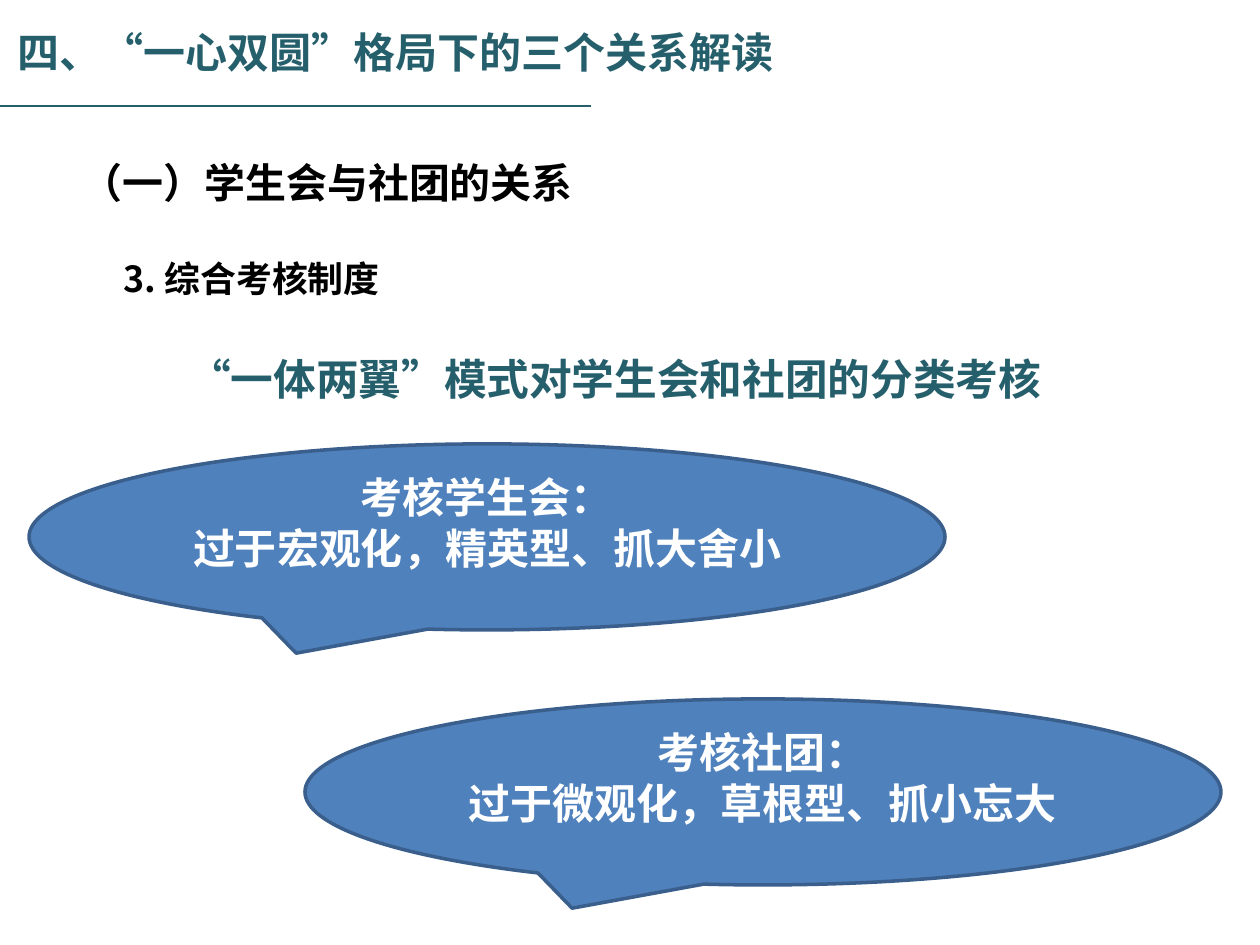
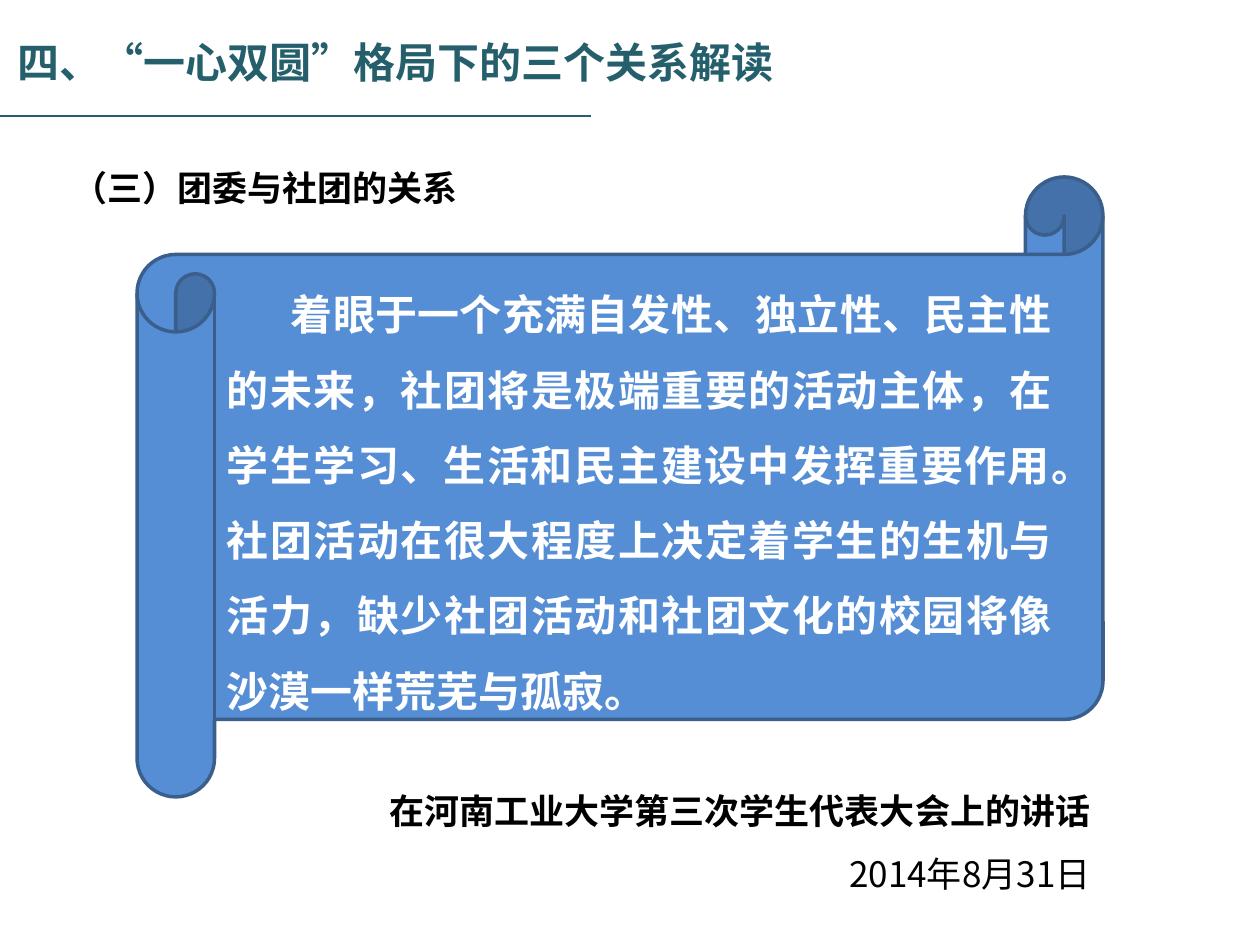
from dataclasses import dataclass

from lxml import etree
from pptx import Presentation
from pptx import util as u
from pptx.dml.color import RGBColor
from pptx.enum import shapes, text
from pptx.oxml.ns import qn


@dataclass(frozen=True)
class Theme:
    font: str = "Noto Sans CJK SC"
    teal: RGBColor = RGBColor.from_string("265F6C")
    black: RGBColor = RGBColor.from_string("000000")
    white: RGBColor = RGBColor.from_string("FFFFFF")
    callout_blue: RGBColor = RGBColor.from_string("4F81BD")
    scroll_blue: RGBColor = RGBColor.from_string("558ED5")
    outline: RGBColor = RGBColor.from_string("3A5F8C")
    heading: float = 24
    section: float = 23.4
    topic: float = 20.5
    claim: float = 24.4
    small: float = 20


theme = Theme()
left, center, right, justify = (
    text.PP_ALIGN.LEFT, text.PP_ALIGN.CENTER, text.PP_ALIGN.RIGHT, text.PP_ALIGN.JUSTIFY)


def px(*lengths):
    return [u.Emu(round(length * 914400 / 126)) for length in lengths]


def write(frame, lines, size, color, leading, align=left, bold=True, before=0, indent=0):
    frame.word_wrap = True
    frame.auto_size = text.MSO_AUTO_SIZE.NONE
    for line in lines:
        paragraph = frame.add_paragraph() if frame.text else frame.paragraphs[0]
        paragraph.text = line
        paragraph.alignment = align
        paragraph.line_spacing = u.Pt(leading)
        paragraph.space_before = u.Pt(before)
        properties = paragraph._p.get_or_add_pPr()
        properties.set("marL", "0")
        properties.set("indent", str(px(indent)[0]))
        paragraph.font.name = theme.font
        paragraph.font.size = u.Pt(size)
        paragraph.font.bold = bold
        paragraph.font.color.rgb = color
        defaults = properties.find(qn("a:defRPr"))
        etree.SubElement(defaults, qn("a:ea")).set("typeface", theme.font)


prs = Presentation()
prs.slide_width, prs.slide_height = px(1260, 945)
title_only = prs.slide_layouts[5]

for drop in (0, 10):
    slide = prs.slides.add_slide(title_only)
    heading = slide.shapes.title
    heading.left, heading.top, heading.width, heading.height = px(5, 20 + drop, 935, 75)
    heading.text_frame.vertical_anchor = text.MSO_ANCHOR.TOP
    write(heading.text_frame, ["四、“一心双圆”格局下的三个关系解读"],
          theme.heading, theme.teal, 29)

    rule = slide.shapes.add_connector(
        shapes.MSO_CONNECTOR.STRAIGHT, *px(0, 106 + drop, 591, 106 + drop))
    rule.line.color.rgb = theme.teal
    rule.line.width = u.Pt(1.25)
    etree.SubElement(rule._element.spPr, qn("a:effectLst"))

assessment, outlook = prs.slides

outline = assessment.shapes.add_textbox(*px(69, 127, 1091, 290)).text_frame
write(outline, ["（一）学生会与社团的关系"], theme.section, theme.black, 42)
write(outline, ["3. 综合考核制度"], theme.topic, theme.black, 42, justify, before=11, indent=42)
write(outline, ["“一体两翼”模式对学生会和社团的分类考核"],
      theme.claim, theme.teal, 50, center, before=10)

critiques = [
    (29, 444, ["考核学生会：", "过于宏观化，精英型、抓大舍小"]),
    (305, 699, ["考核社团：", "过于微观化，草根型、抓小忘大"]),
]
for x, y, critique in critiques:
    callout = assessment.shapes.add_shape(
        shapes.MSO_SHAPE.OVAL_CALLOUT, *px(x, y, 916, 186))
    callout.shadow.inherit = False
    callout.fill.solid()
    callout.fill.fore_color.rgb = theme.callout_blue
    callout.line.color.rgb = theme.outline
    callout.line.width = u.Pt(2)
    callout.text_frame.vertical_anchor = text.MSO_ANCHOR.TOP
    callout.text_frame.margin_top = 0
    write(callout.text_frame, critique, theme.heading, theme.white, 29, center)

section = outlook.shapes.add_textbox(*px(60, 160, 1076, 54)).text_frame
write(section, ["（三）团委与社团的关系"], theme.small, theme.black, 24)

scroll = outlook.shapes.add_shape(
    shapes.MSO_SHAPE.HORIZONTAL_SCROLL, *px(137, 177, 966, 620))
scroll.shadow.inherit = False
scroll.fill.solid()
scroll.fill.fore_color.rgb = theme.scroll_blue
scroll.line.color.rgb = theme.outline
scroll.line.width = u.Pt(2)
scroll.text_frame.vertical_anchor = text.MSO_ANCHOR.MIDDLE
scroll.text_frame.margin_top = px(12)[0]
write(scroll.text_frame,
      ["着眼于一个充满自发性、独立性、民主性的未来，社团将是极端重要的活动主体，"
       "在学生学习、生活和民主建设中发挥重要作用。社团活动在很大程度上决定着学生的"
       "生机与活力，缺少社团活动和社团文化的校园将像沙漠一样荒芜与孤寂。"],
      theme.heading, theme.white, 43, justify, indent=64)

speech = outlook.shapes.add_textbox(*px(276, 762, 827, 140)).text_frame
write(speech, ["在河南工业大学第三次学生代表大会上的讲话"], theme.small, theme.black, 36, right)
write(speech, ["2014年8月31日"], theme.small, theme.black, 36, right, bold=False)

prs.save("out.pptx")
